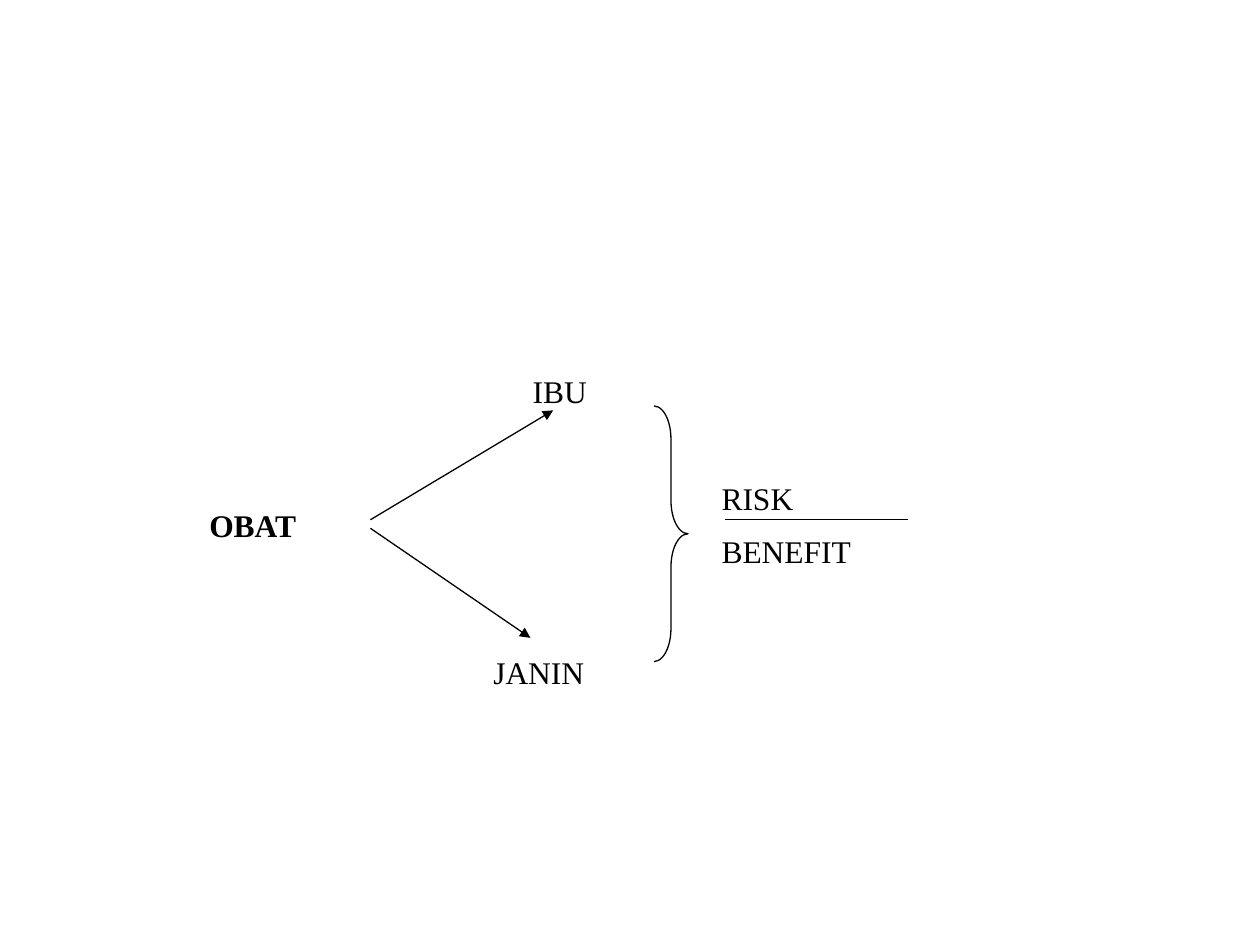
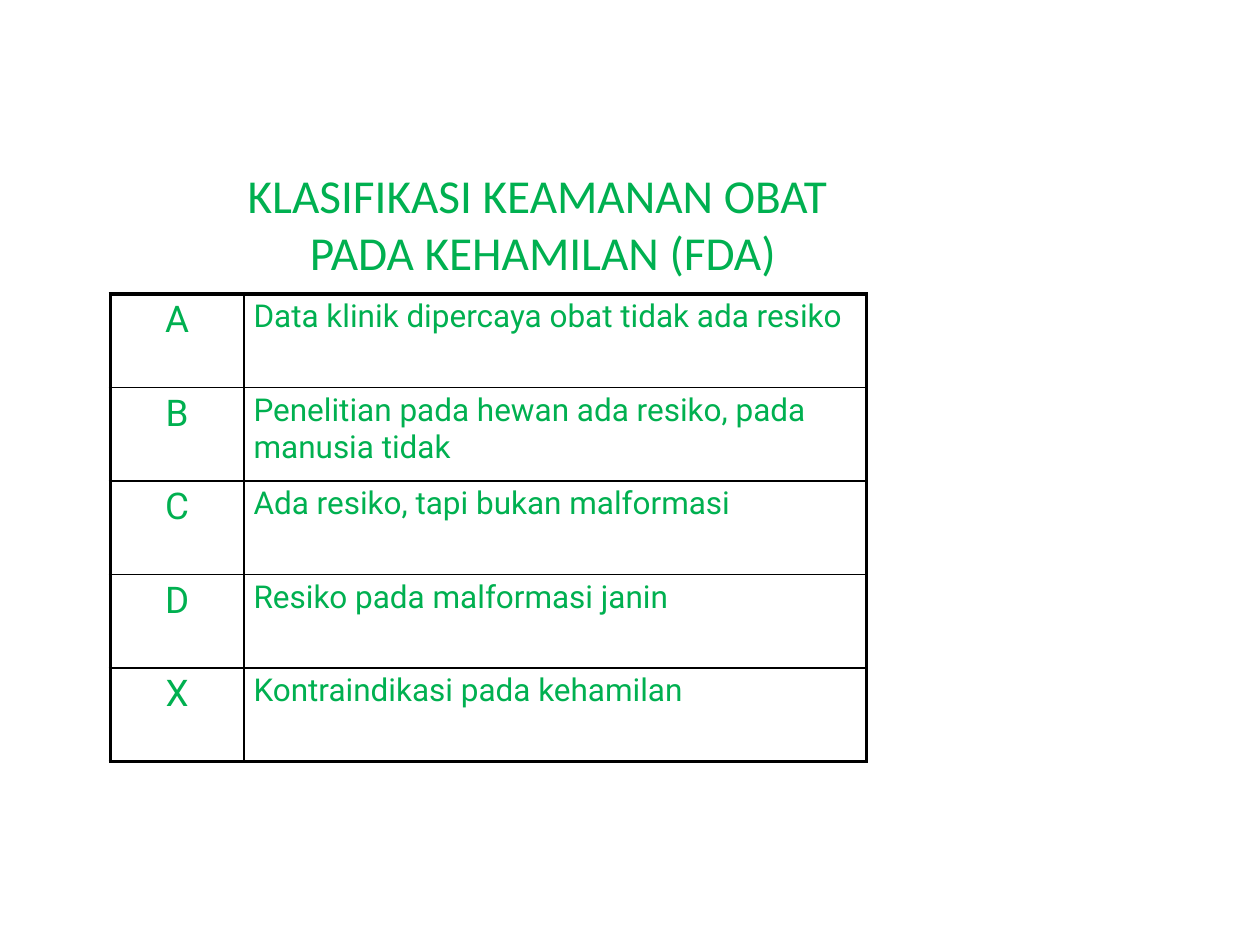
from dataclasses import dataclass

from lxml.etree import SubElement
from pptx import Presentation
from pptx.dml.color import RGBColor
from pptx.enum.shapes import MSO_CONNECTOR, MSO_SHAPE
from pptx.enum.text import MSO_ANCHOR, PP_ALIGN
from pptx.oxml import parse_xml
from pptx.oxml.ns import nsdecls, qn
from pptx.util import Pt


@dataclass(frozen=True)
class Theme:
    ink: RGBColor = RGBColor(0x00, 0x00, 0x00)
    green: RGBColor = RGBColor(0x00, 0xB0, 0x50)
    diagram_font: str = "Times New Roman"
    title_font: str = "Calibri"
    table_font: str = "Roboto"
    body_size: float = 18
    letter_size: float = 21
    title_size: float = 27
    line_width: float = 0.75
    inner_border: float = 1
    outer_border: float = 2.25


THEME = Theme()

# (lines, left, top, width, height, alignment, bold)
LABELS = [
    (["OBAT"], 112.5, 285.8, 137.5, 28.8, PP_ALIGN.LEFT, True),
    (["JANIN"], 274.8, 369.8, 104.4, 28.8, PP_ALIGN.LEFT, False),
    (["IBU"], 261.2, 209.2, 117.4, 28.8, PP_ALIGN.CENTER, False),
    (["RISK", "BENEFIT"], 405.2, 270, 130.3, 62, PP_ALIGN.LEFT, False),
]
# (start, end, has arrowhead)
LINES = [
    ((211.7, 297), (316.1, 234.5), True),
    ((211.7, 301.9), (303.1, 364.5), True),
    ((414.2, 297), (518.6, 297), False),
]
BRACE = (373.7, 232, 19.5, 146.1)
BRACE_CURVE = 0.972
LABEL_GAP = 9

TITLE = "KLASIFIKASI KEAMANAN OBAT \vPADA KEHAMILAN (FDA)"
TITLE_BOX = (53.5, 90.2, 513.4, 63.4)
CATEGORIES = [
    ("A", "Data klinik dipercaya obat tidak ada resiko"),
    ("B", "Penelitian pada hewan ada resiko, pada manusia tidak"),
    ("C", "Ada resiko, tapi bukan malformasi"),
    ("D", "Resiko pada malformasi janin"),
    ("X", "Kontraindikasi pada kehamilan"),
]
TABLE_LEFT, TABLE_TOP = 63, 168
COLUMN_WIDTHS = (76.5, 355.5)
ROW_HEIGHT = 53.44


def points(values):
    return [Pt(value) for value in values]


def style(paragraph, font, size, color, alignment, bold=False):
    paragraph.alignment = alignment
    paragraph.font.name = font
    paragraph.font.size = Pt(size)
    paragraph.font.bold = bold
    paragraph.font.color.rgb = color


def add_text(slide, lines, box, font, size, color, alignment, bold=False):
    frame = slide.shapes.add_textbox(*points(box)).text_frame
    frame.word_wrap = True
    frame.vertical_anchor = MSO_ANCHOR.TOP
    for index, line in enumerate(lines):
        paragraph = frame.add_paragraph() if index else frame.paragraphs[0]
        paragraph.text = line
        style(paragraph, font, size, color, alignment, bold)
        if index:
            paragraph.space_before = Pt(LABEL_GAP)
    return frame


def draw_outline(shape):
    shape.line.color.rgb = THEME.ink
    shape.line.width = Pt(THEME.line_width)


def add_line(slide, start, end, has_arrowhead):
    connector = slide.shapes.add_connector(MSO_CONNECTOR.STRAIGHT, *points(start + end))
    draw_outline(connector)
    if has_arrowhead:
        SubElement(connector.line._get_or_add_ln(), qn("a:tailEnd"), type="triangle")
    SubElement(connector._element.spPr, qn("a:effectLst"))


def set_borders(cell, widths):
    """Give the cell its left, right, top and bottom borders."""
    properties = cell._tc.get_or_add_tcPr()
    for position, (side, width) in enumerate(zip("LRTB", widths)):
        properties.insert(position, parse_xml(
            f'<a:ln{side} {nsdecls("a")} w="{Pt(width)}"><a:solidFill>'
            f'<a:srgbClr val="{THEME.ink}"/></a:solidFill></a:ln{side}>'))


def build_diagram(slide):
    for lines, *box, alignment, bold in LABELS:
        add_text(slide, lines, box, THEME.diagram_font, THEME.body_size,
                 THEME.ink, alignment, bold)
    for line in LINES:
        add_line(slide, *line)
    brace = slide.shapes.add_shape(MSO_SHAPE.RIGHT_BRACE, *points(BRACE))
    brace.adjustments[0] = BRACE_CURVE
    brace.shadow.inherit = False
    brace.fill.background()
    draw_outline(brace)


def build_classification(slide):
    frame = add_text(slide, [TITLE], TITLE_BOX, THEME.title_font, THEME.title_size,
                     THEME.green, PP_ALIGN.CENTER)
    frame.margin_top = Pt(5)

    row_count, column_count = len(CATEGORIES), len(COLUMN_WIDTHS)
    table = slide.shapes.add_table(
        row_count, column_count,
        *points((TABLE_LEFT, TABLE_TOP, sum(COLUMN_WIDTHS), ROW_HEIGHT * row_count))).table
    table.first_row = table.horz_banding = False
    for column, width in zip(table.columns, COLUMN_WIDTHS):
        column.width = Pt(width)

    column_styles = [(THEME.letter_size, PP_ALIGN.CENTER), (THEME.body_size, PP_ALIGN.LEFT)]
    for row, texts in enumerate(CATEGORIES):
        table.rows[row].height = Pt(ROW_HEIGHT)
        for column, (text, (size, alignment)) in enumerate(zip(texts, column_styles)):
            cell = table.cell(row, column)
            cell.text = text
            cell.fill.background()
            cell.margin_left = cell.margin_right = Pt(5.4)
            cell.margin_top = cell.margin_bottom = Pt(2.7)
            style(cell.text_frame.paragraphs[0], THEME.table_font, size,
                  THEME.green, alignment)
            outer_sides = (column == 0, column == column_count - 1,
                           row == 0, row == row_count - 1)
            set_borders(cell, [THEME.outer_border if outer else THEME.inner_border
                               for outer in outer_sides])


def main():
    presentation = Presentation()
    presentation.slide_width, presentation.slide_height = Pt(720), Pt(540)
    blank_layout = presentation.slide_layouts[6]
    for build in (build_diagram, build_classification):
        build(presentation.slides.add_slide(blank_layout))
    presentation.save("out.pptx")


if __name__ == "__main__":
    main()
